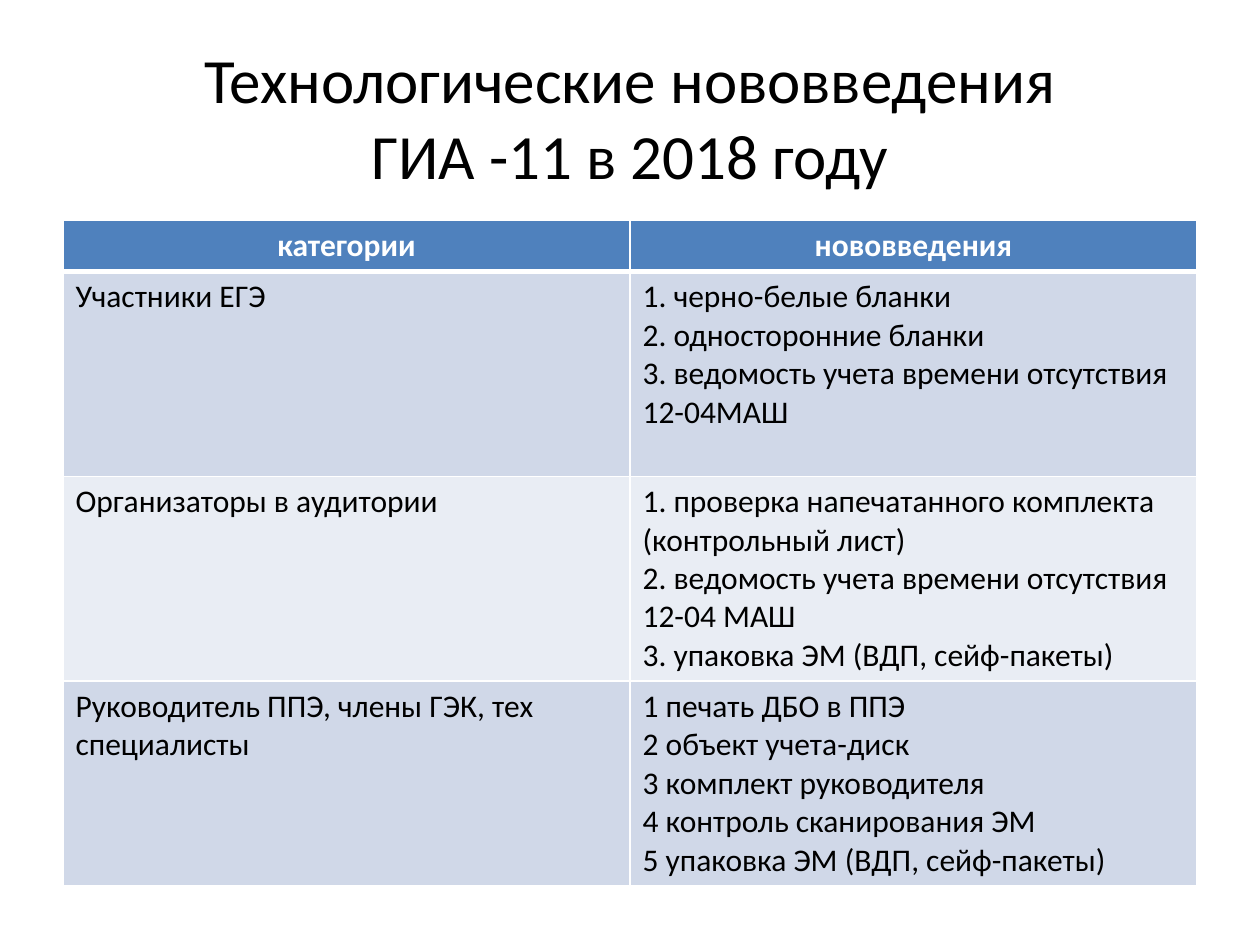
from lxml.etree import SubElement
from pptx import Presentation
from pptx.dml.color import RGBColor as Color
from pptx.enum.text import MSO_ANCHOR as Anchor, PP_ALIGN as Align
from pptx.oxml.ns import qn
from pptx.util import Pt

TITLE = "Технологические нововведения\vГИА -11 в 2018 году"
HEADER = ("категории", "нововведения")
ROWS = [
    ("Участники ЕГЭ", [
        "1. черно-белые бланки",
        "2. односторонние бланки",
        "3. ведомость учета времени отсутствия 12-04МАШ",
    ]),
    ("Организаторы в аудитории", [
        "1. проверка напечатанного комплекта (контрольный лист)",
        "2. ведомость учета времени отсутствия 12-04 МАШ",
        "3. упаковка ЭМ (ВДП, сейф-пакеты)",
    ]),
    ("Руководитель ППЭ, члены ГЭК, тех специалисты", [
        "1 печать ДБО в ППЭ",
        "2 объект учета-диск",
        "3 комплект руководителя",
        "4 контроль сканирования ЭМ",
        "5 упаковка ЭМ (ВДП, сейф-пакеты)",
    ]),
]

THEME = {
    "font": "Calibri",
    "title_size": 36,
    "table_size": 18,
    "text": "000000",
    "line": "FFFFFF",
    "header_text": "FFFFFF",
    "header_fill": "4F81BD",
    "bands": ("D0D8E8", "E9EDF4"),
}
LEFT, WIDTH = 36, 648
TITLE_TOP, TITLE_HEIGHT = 21.6, 90
TABLE_TOP, HEADER_HEIGHT, ROW_HEIGHT = 126, 29.2, 117


def write(frame, lines, size, color, align=Align.LEFT, bold=False):
    """Fill a text frame with one formatted paragraph per line."""
    font = {"name": THEME["font"], "size": Pt(size), "bold": bold}
    for index, line in enumerate(lines):
        para = frame.add_paragraph() if index else frame.paragraphs[0]
        para.text = line
        para.alignment = align
        for span in para.runs:
            for name, value in font.items():
                setattr(span.font, name, value)
            span.font.color.rgb = Color.from_string(color)


def style_cell(cell, fill, bottom=1, top=1):
    """Give a cell its borders and fill."""
    props = cell._tc.get_or_add_tcPr()
    for side, width in {"L": 1, "R": 1, "T": top, "B": bottom}.items():
        line = SubElement(props, qn(f"a:ln{side}"), w=str(Pt(width)))
        solid = SubElement(line, qn("a:solidFill"))
        SubElement(solid, qn("a:srgbClr"), val=THEME["line"])
    cell.fill.solid()
    cell.fill.fore_color.rgb = Color.from_string(fill)


def add_title(page):
    """Place the centred title."""
    box = page.shapes.add_textbox(Pt(LEFT), Pt(TITLE_TOP), Pt(WIDTH), Pt(TITLE_HEIGHT))
    frame = box.text_frame
    for name, value in {"word_wrap": True, "vertical_anchor": Anchor.MIDDLE}.items():
        setattr(frame, name, value)
    write(frame, [TITLE], THEME["title_size"], THEME["text"], Align.CENTER)


def add_innovations(page):
    """Place the table of categories and innovations."""
    height = HEADER_HEIGHT + ROW_HEIGHT * len(ROWS)
    table = page.shapes.add_table(
        len(ROWS) + 1, len(HEADER), Pt(LEFT), Pt(TABLE_TOP), Pt(WIDTH), Pt(height)
    ).table
    size = THEME["table_size"]
    table.rows[0].height = Pt(HEADER_HEIGHT)
    for column, label in enumerate(HEADER):
        cell = table.cell(0, column)
        style_cell(cell, THEME["header_fill"], bottom=3)
        write(cell.text_frame, [label], size, THEME["header_text"], Align.CENTER, True)
    for number, (category, changes) in enumerate(ROWS, 1):
        table.rows[number].height = Pt(ROW_HEIGHT)
        for column, lines in enumerate(([category], changes)):
            cell = table.cell(number, column)
            style_cell(cell, THEME["bands"][(number - 1) % 2], top=3 if number == 1 else 1)
            write(cell.text_frame, lines, size, THEME["text"])


def main():
    """Build and save the slide."""
    deck = Presentation()
    deck.slide_width, deck.slide_height = Pt(720), Pt(540)
    page = deck.slides.add_slide(deck.slide_layouts[6])
    add_title(page)
    add_innovations(page)
    deck.save("out.pptx")


if __name__ == "__main__":
    main()
